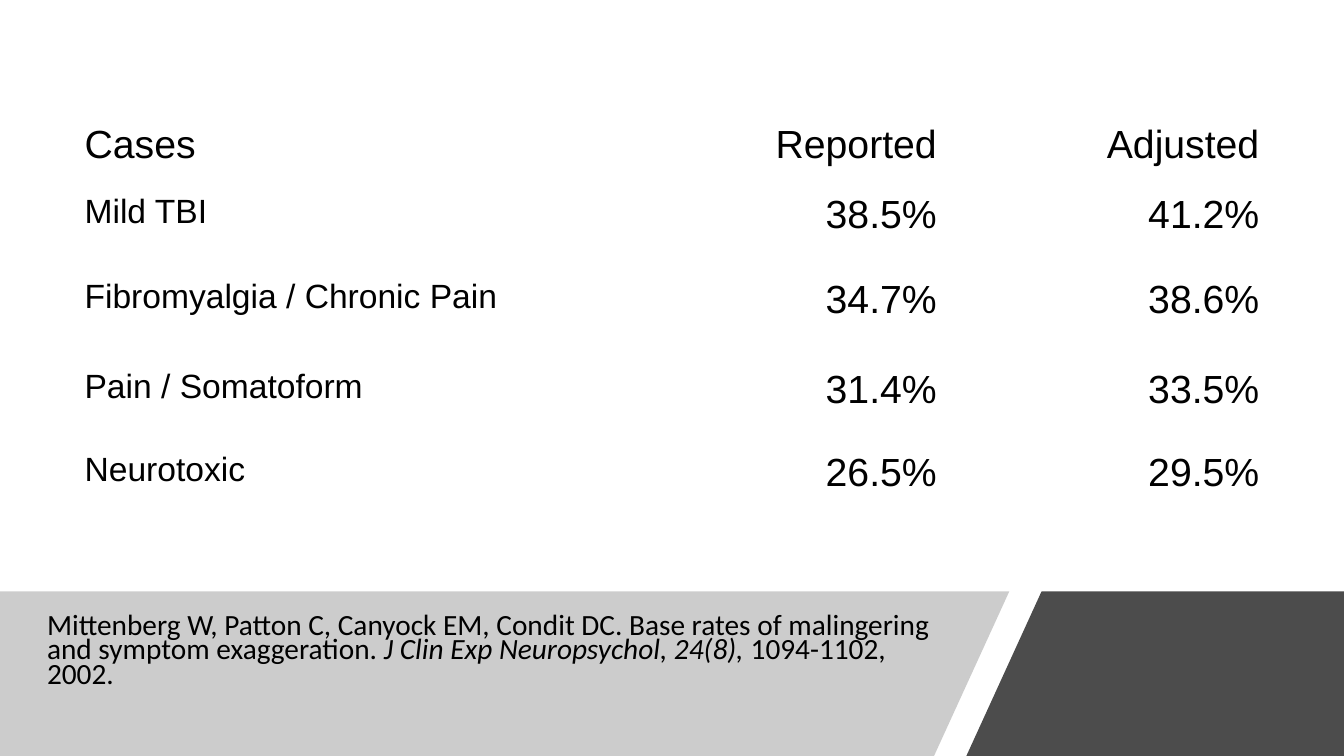
import dataclasses

import lxml.etree
import pptx
import pptx.dml.color
import pptx.enum.text
import pptx.oxml.ns
import pptx.util

Inches = pptx.util.Inches
Pt = pptx.util.Pt
RGBColor = pptx.dml.color.RGBColor
PP_ALIGN = pptx.enum.text.PP_ALIGN


@dataclasses.dataclass(frozen=True)
class Theme:
    ink: RGBColor = RGBColor(0, 0, 0)
    grey: RGBColor = RGBColor(0x80, 0x80, 0x80)
    table_font: str = "Arial"
    citation_font: str = "Calibri"
    figure_size: float = 21
    label_size: float = 18
    citation_size: float = 15.7


class SlideBuilder:
    """Draws styled elements on the current slide."""

    def __init__(self, theme, slide):
        self.theme = theme
        self.slide = slide

    def run(self, paragraph, text, font, size, italic=False):
        run = paragraph.add_run()
        run.text = text
        run.font.name = font
        run.font.size = Pt(size)
        run.font.italic = italic
        run.font.color.rgb = self.theme.ink

    def band(self, corners, color, opacity):
        start, *others = [(Inches(x), Inches(y)) for x, y in corners]
        outline = self.slide.shapes.build_freeform(*start, scale=1.0)
        outline.add_line_segments(others, close=True)
        band = outline.convert_to_shape()
        band.shadow.inherit = False
        band.line.fill.background()
        band.fill.solid()
        band.fill.fore_color.rgb = color
        qn = pptx.oxml.ns.qn
        tint = band.element.spPr.find(qn("a:solidFill")).find(qn("a:srgbClr"))
        lxml.etree.SubElement(tint, qn("a:alpha"), val=str(opacity * 1000))

    def table(self, left, top, widths, heights, rows):
        table = self.slide.shapes.add_table(
            len(rows), len(widths), Inches(left), Inches(top),
            Inches(sum(widths)), Inches(sum(heights))).table
        table.first_row = table.horz_banding = False
        for column, width in zip(table.columns, widths):
            column.width = Inches(width)
        for r, (height, row) in enumerate(zip(heights, rows)):
            table.rows[r].height = Inches(height)
            for c, text in enumerate(row):
                cell = table.cell(r, c)
                cell.fill.background()
                cell.margin_left = cell.margin_right = Inches(0.12)
                cell.margin_top = cell.margin_bottom = Inches(0.04)
                paragraph = cell.text_frame.paragraphs[0]
                paragraph.alignment = PP_ALIGN.RIGHT if c else PP_ALIGN.LEFT
                is_label = r > 0 and c == 0
                size = self.theme.label_size if is_label else self.theme.figure_size
                self.run(paragraph, text, self.theme.table_font, size)

    def title(self, left, top, width, height, parts):
        title = self.slide.shapes.title
        title.left, title.top = Inches(left), Inches(top)
        title.width, title.height = Inches(width), Inches(height)
        title.element.getparent().append(title.element)
        frame = title.text_frame
        frame.word_wrap = True
        frame.auto_size = pptx.enum.text.MSO_AUTO_SIZE.NONE
        frame.vertical_anchor = pptx.enum.text.MSO_ANCHOR.BOTTOM
        paragraph = frame.paragraphs[0]
        paragraph.alignment = PP_ALIGN.LEFT
        paragraph.line_spacing = 0.7
        for text, italic in parts:
            self.run(paragraph, text, self.theme.citation_font,
                     self.theme.citation_size, italic)


def main():
    width, band_top = 10, 4.4
    height = width * 9 / 16
    deck = pptx.Presentation()
    deck.slide_width, deck.slide_height = Inches(width), Inches(height)
    theme = Theme()
    builder = SlideBuilder(theme, deck.slides.add_slide(deck.slide_layouts[5]))

    builder.band([(0, band_top), (7.51, band_top), (6.95, height), (0, height)],
                 theme.grey, 40)
    builder.band([(7.75, band_top), (width, band_top), (width, height), (7.19, height)],
                 theme.ink, 70)

    base_rates = [
        ("Cases", "Reported", "Adjusted"),
        ("Mild TBI", "38.5%", "41.2%"),
        ("Fibromyalgia / Chronic Pain", "34.7%", "38.6%"),
        ("Pain / Somatoform", "31.4%", "33.5%"),
        ("Neurotoxic", "26.5%", "29.5%"),
    ]
    builder.table(0.51, 0.88, [4.5, 2.08, 2.4],
                  [0.52, 0.63, 0.67, 0.62, 0.52], base_rates)

    citation = [
        ("Mittenberg W, Patton C, Canyock EM, Condit DC. Base rates of "
         "malingering and symptom exaggeration. ", False),
        ("J Clin Exp Neuropsychol, 24(8), ", True),
        ("1094-1102, 2002.", False),
    ]
    builder.title(0.25, 4.5, 6.94, 0.68, citation)
    deck.save("out.pptx")


if __name__ == "__main__":
    main()
